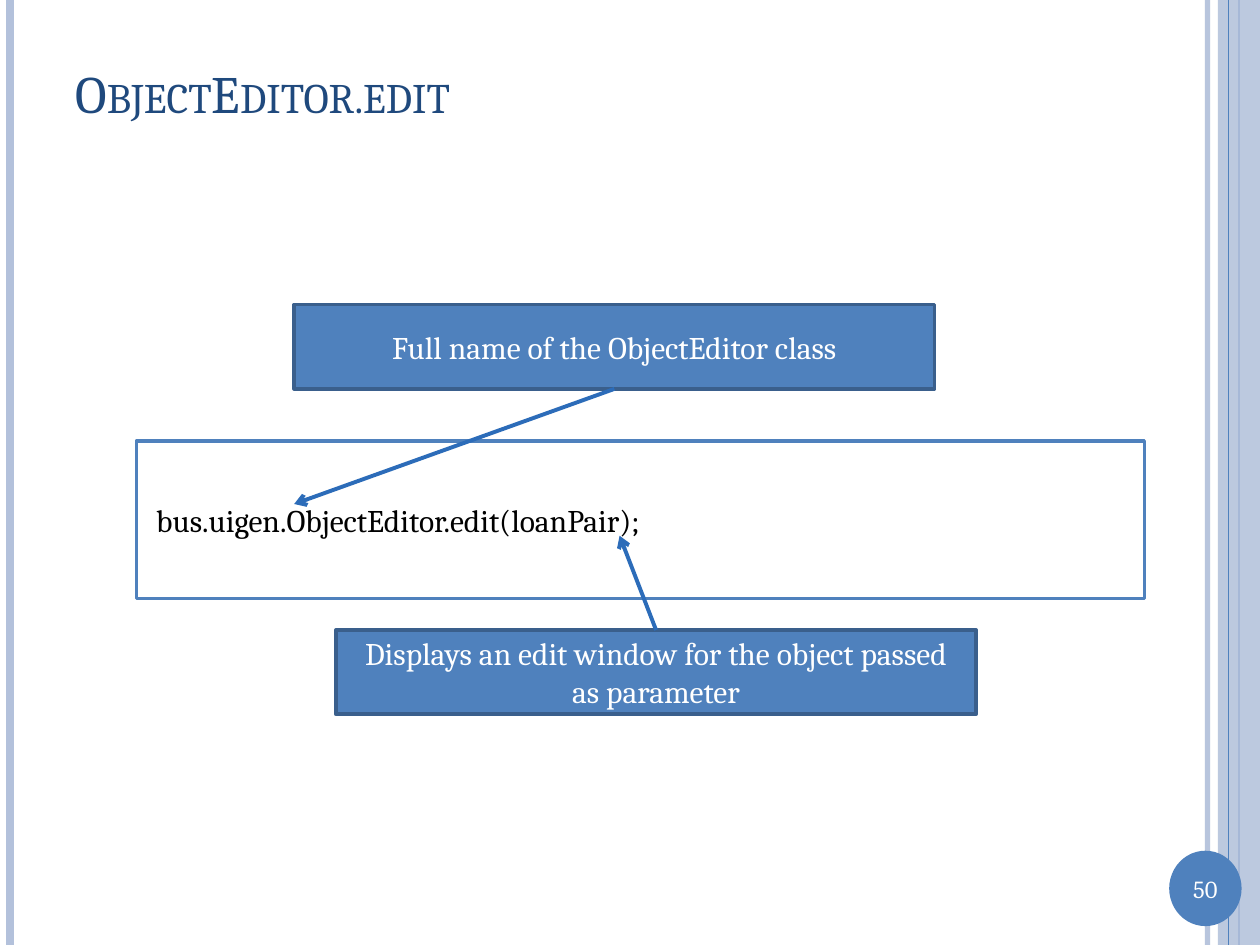
from lxml import etree
from pptx import Presentation
from pptx.dml.color import RGBColor
from pptx.enum.shapes import MSO_CONNECTOR, MSO_SHAPE
from pptx.enum.text import MSO_ANCHOR, PP_ALIGN
from pptx.oxml.ns import qn
from pptx.util import Cm, Pt

RECTANGLE, ELLIPSE = MSO_SHAPE.RECTANGLE, MSO_SHAPE.OVAL
STRAIGHT = MSO_CONNECTOR.STRAIGHT
MIDDLE = MSO_ANCHOR.MIDDLE
LEFT, CENTER = PP_ALIGN.LEFT, PP_ALIGN.CENTER
TOP_SIDE, BOTTOM_SIDE = 0, 2

FONT = "Cambria"
WIDTH, HEIGHT = 25.4, 19.05
COLORS = {
    "band": "B3C1DB",
    "accent": "4F81BD",
    "border": "3A5F8C",
    "arrow": "2C6CB9",
    "title": "1F497D",
    "white": "FFFFFF",
    "black": "000000",
}


def rgb(name):
    """Return the named colour."""
    return RGBColor.from_string(COLORS[name])


def set_opacity(shape, percent):
    """Make the shape's solid colour partly transparent."""
    color = shape._element.spPr.find(".//" + qn("a:srgbClr"))
    etree.SubElement(color, qn("a:alpha"), val=str(percent * 1000))


def add_line(slide, start, end, color, width):
    """Draw a straight line between two points without a shadow."""
    line = slide.shapes.add_connector(STRAIGHT, *map(Cm, (*start, *end)))
    line.line.color.rgb = rgb(color)
    line.line.width = Pt(width)
    etree.SubElement(line._element.spPr, qn("a:effectLst"))
    return line


def add_block(slide, kind, box, fill, border=None):
    """Draw a filled preset shape with an optional border."""
    shape = slide.shapes.add_shape(kind, *map(Cm, box))
    shape.shadow.inherit = False
    shape.fill.solid()
    shape.fill.fore_color.rgb = rgb(fill)
    if border:
        shape.line.color.rgb = rgb(border)
        shape.line.width = Pt(2)
    else:
        shape.line.fill.background()
    return shape


def write(shape, text, size, color, alignment):
    """Put one vertically centred paragraph in the shape."""
    frame = shape.text_frame
    frame.word_wrap = True
    frame.vertical_anchor = MIDDLE
    paragraph = frame.paragraphs[0]
    paragraph.text = text
    paragraph.alignment = alignment
    paragraph.font.name = FONT
    paragraph.font.size = Pt(size)
    paragraph.font.color.rgb = rgb(color)
    return paragraph


def add_frame(slide, box):
    """Draw the vertical bands along both edges of the box."""
    left, top, width, height = box
    right, bottom = left + width, top + height

    def rule(x, color, line_width):
        return add_line(slide, (x, top), (x, bottom), color, line_width)

    set_opacity(rule(right - 1.06, "band", 3), 93)
    rule(left + 0.21, "band", 4.5)
    rule(right - 0.42, "accent", 1.5)
    band = add_block(slide, RECTANGLE, (right - 0.85, top, 0.85, height), "band")
    set_opacity(band, 87)
    rule(right - 0.64, "accent", 0.75)


def add_page_number(slide, box, number):
    """Draw the page number in a disc."""
    disc = add_block(slide, ELLIPSE, box, "accent")
    frame = disc.text_frame
    frame.margin_left = frame.margin_right = 0
    write(disc, number, 14, "white", CENTER)


def add_title(slide, box, text):
    """Write the title in small capitals."""
    title = slide.shapes.add_textbox(*map(Cm, box))
    paragraph = write(title, text, 30, "title", LEFT)
    paragraph.font._element.set("cap", "small")


def add_code(slide, box, text):
    """Draw the outlined box with a line of code."""
    code = add_block(slide, RECTANGLE, box, "white", "accent")
    code.text_frame.margin_left = Cm(0.4)
    write(code, text, 18, "black", LEFT)


def add_callout(slide, box, text, side, target):
    """Draw a label with an arrow from one side to the target point."""
    left, top, width, height = box
    label = add_block(slide, RECTANGLE, box, "accent", "border")
    write(label, text, 18, "white", CENTER)
    start = (left + width / 2, top + (height if side == BOTTOM_SIDE else 0))
    arrow = add_line(slide, start, target, "arrow", 2.25)
    arrow.begin_connect(label, side)
    etree.SubElement(arrow.line._get_or_add_ln(), qn("a:tailEnd"), type="arrow")


def main():
    """Build and save the slide."""
    presentation = Presentation()
    presentation.slide_width, presentation.slide_height = Cm(WIDTH), Cm(HEIGHT)
    slide = presentation.slides.add_slide(presentation.slide_layouts[6])
    add_frame(slide, (0, 0, WIDTH, HEIGHT))
    add_page_number(slide, (23.57, 17.15, 1.46, 1.52), "50")
    add_title(slide, (1.27, 0.76, 22.02, 2.2), "ObjectEditor.edit")
    add_code(slide, (2.75, 8.89, 20.32, 3.18),
             "bus.uigen.ObjectEditor.edit(loanPair);")
    add_callout(slide, (6.77, 12.7, 12.91, 1.7),
                "Displays an edit window for the object passed as parameter",
                TOP_SIDE, (12.49, 10.8))
    add_callout(slide, (5.93, 6.14, 12.91, 1.7),
                "Full name of the ObjectEditor class",
                BOTTOM_SIDE, (5.93, 10.16))
    presentation.save("out.pptx")


if __name__ == "__main__":
    main()
